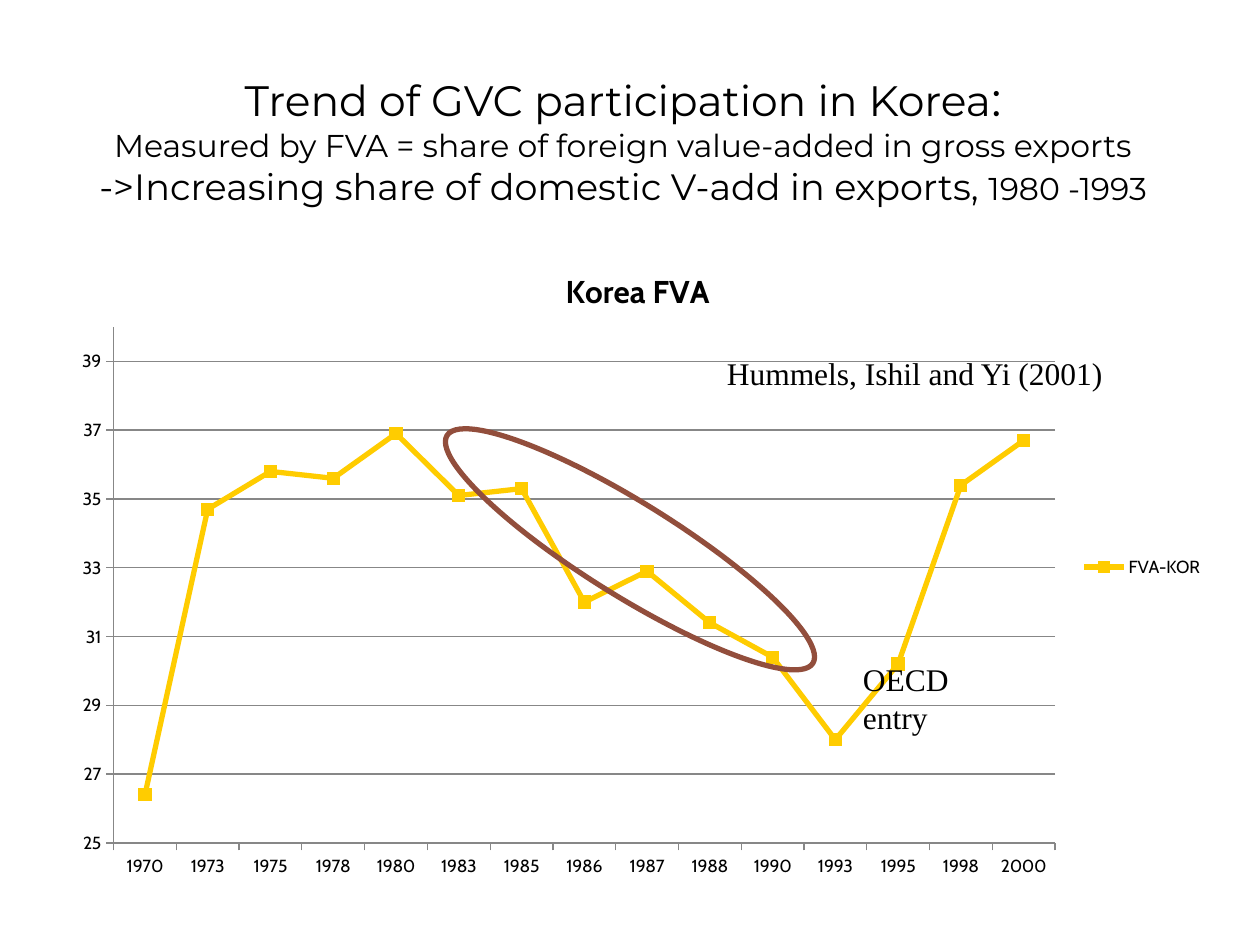
"""Build a slide on the trend of Korea's participation in global value chains."""
from lxml.etree import SubElement
from pptx import Presentation
from pptx.chart.data import CategoryChartData
from pptx.dml.color import RGBColor
from pptx.enum.chart import XL_CHART_TYPE as ChartType, XL_LEGEND_POSITION as LegendPosition
from pptx.enum.chart import XL_MARKER_STYLE as MarkerStyle, XL_TICK_MARK as TickMark
from pptx.enum.shapes import MSO_SHAPE as Shape
from pptx.enum.text import MSO_ANCHOR as Anchor, PP_ALIGN as Align
from pptx.oxml.ns import qn
from pptx.util import Inches, Pt

BLACK = RGBColor(0x00, 0x00, 0x00)
GRAY = RGBColor(0x87, 0x87, 0x87)
YELLOW = RGBColor(0xFF, 0xCC, 0x00)
BROWN = RGBColor(0x92, 0x4E, 0x3C)

TITLE_BOX = (0.12, 0.35, 9.65, 1.58)
TITLE_LINES = [
    [("Trend of GVC participation in Korea", 24.3), (":", 27)],
    [("Measured by FVA = share of foreign value-added in gross exports", 18)],
    [("->Increasing share of domestic V-add in exports, ", 20.9), ("1980 -1993", 18)],
]
CHART_BOX = (0.47, 1.94, 9.18, 5.12)
PLOT_SHARES = {"x": 0.047, "y": 0.128, "w": 0.814, "h": 0.8}
CHART_TITLE = "Korea FVA"
SERIES_NAME = "FVA-KOR"
FVA_BY_YEAR = {
    "1970": 26.4, "1973": 34.7, "1975": 35.8, "1978": 35.6, "1980": 36.9,
    "1983": 35.1, "1985": 35.3, "1986": 32, "1987": 32.9, "1988": 31.4,
    "1990": 30.4, "1993": 28, "1995": 30.2, "1998": 35.4, "2000": 36.7,
}
VALUE_SCALE = {"minimum_scale": 25, "maximum_scale": 40, "major_unit": 2}
DECLINE_BOX, DECLINE_ROTATION = (3.29, 3.99, 3.42, 0.74), 31.9
NOTES = [
    ("OECD entry", (6.75, 5.19, 0.92, 0.71), True),
    ("Hummels, Ishil and Yi (2001)", (5.67, 2.76, 3.21, 0.4), False),
]


def set_font(font, name, size, bold=False):
    """Apply the name, size, weight and black colour."""
    for key, value in {"name": name, "size": Pt(size), "bold": bold}.items():
        setattr(font, key, value)
    font.color.rgb = BLACK


def set_line(line, color, width):
    """Apply a solid colour and a width in points."""
    line.color.rgb = color
    line.width = Pt(width)


def add_text(slide, box, lines, font_name, wrap=True, **frame_format):
    """Add a text box of lines, each a list of (text, size) runs."""
    frame = slide.shapes.add_textbox(*map(Inches, box)).text_frame
    for key, value in {"word_wrap": wrap, **frame_format}.items():
        setattr(frame, key, value)
    paragraph = frame.paragraphs[0]
    for index, line in enumerate(lines):
        if index:
            paragraph.add_line_break()
        for text, size in line:
            run = paragraph.add_run()
            run.text = text
            set_font(run.font, font_name, size)
    return paragraph


def place_plot(chart):
    """Fix the inner plot area at its shares of the chart's size."""
    plot_area = chart._chartSpace.chart.plotArea
    layout = plot_area.find(qn("c:layout"))
    if layout is None:
        layout = SubElement(plot_area, qn("c:layout"))
        plot_area.insert(0, layout)
    manual = SubElement(layout, qn("c:manualLayout"))
    settings = {"layoutTarget": "inner", "xMode": "edge", "yMode": "edge", **PLOT_SHARES}
    for tag, value in settings.items():
        SubElement(manual, qn(f"c:{tag}")).set("val", str(value))


def add_fva_chart(slide):
    """Add the line chart of foreign value-added."""
    data = CategoryChartData()
    data.categories = list(FVA_BY_YEAR)
    data.add_series(SERIES_NAME, list(FVA_BY_YEAR.values()))
    chart = slide.shapes.add_chart(
        ChartType.LINE_MARKERS, *map(Inches, CHART_BOX), data).chart
    set_font(chart.font, "Cabin", 10)
    place_plot(chart)

    chart.has_title = True
    title_run = chart.chart_title.text_frame.paragraphs[0].add_run()
    title_run.text = CHART_TITLE
    set_font(title_run.font, "Cabin", 18, bold=True)
    chart.has_legend = True
    chart.legend.position = LegendPosition.RIGHT
    chart.legend.include_in_layout = False

    for axis in (chart.category_axis, chart.value_axis):
        axis.major_tick_mark = TickMark.OUTSIDE
        set_line(axis.format.line, GRAY, 0.75)
    for key, value in VALUE_SCALE.items():
        setattr(chart.value_axis, key, value)
    chart.value_axis.tick_labels.number_format = "General"
    chart.value_axis.tick_labels.number_format_is_linked = False
    set_line(chart.value_axis.major_gridlines.format.line, GRAY, 0.75)

    chart.plots[0].vary_by_categories = False
    series = chart.plots[0].series[0]
    series.smooth = False
    set_line(series.format.line, YELLOW, 3)
    marker = series.marker
    marker.style, marker.size = MarkerStyle.SQUARE, 7
    marker.format.fill.solid()
    marker.format.fill.fore_color.rgb = YELLOW
    set_line(marker.format.line, YELLOW, 0.75)


def main():
    """Assemble and save the slide."""
    presentation = Presentation()
    presentation.slide_width, presentation.slide_height = Inches(10), Inches(7.5)
    slide = presentation.slides.add_slide(presentation.slide_layouts[6])

    title = add_text(slide, TITLE_BOX, TITLE_LINES, "Montserrat",
                     vertical_anchor=Anchor.BOTTOM, margin_bottom=Inches(0.28))
    title.alignment = Align.CENTER
    add_fva_chart(slide)

    decline = slide.shapes.add_shape(Shape.OVAL, *map(Inches, DECLINE_BOX))
    decline.rotation = DECLINE_ROTATION
    decline.shadow.inherit = False
    decline.fill.background()
    set_line(decline.line, BROWN, 3)

    for text, box, wrap in NOTES:
        add_text(slide, box, [[(text, 18)]], "Times New Roman", wrap)
    presentation.save("out.pptx")


if __name__ == "__main__":
    main()
